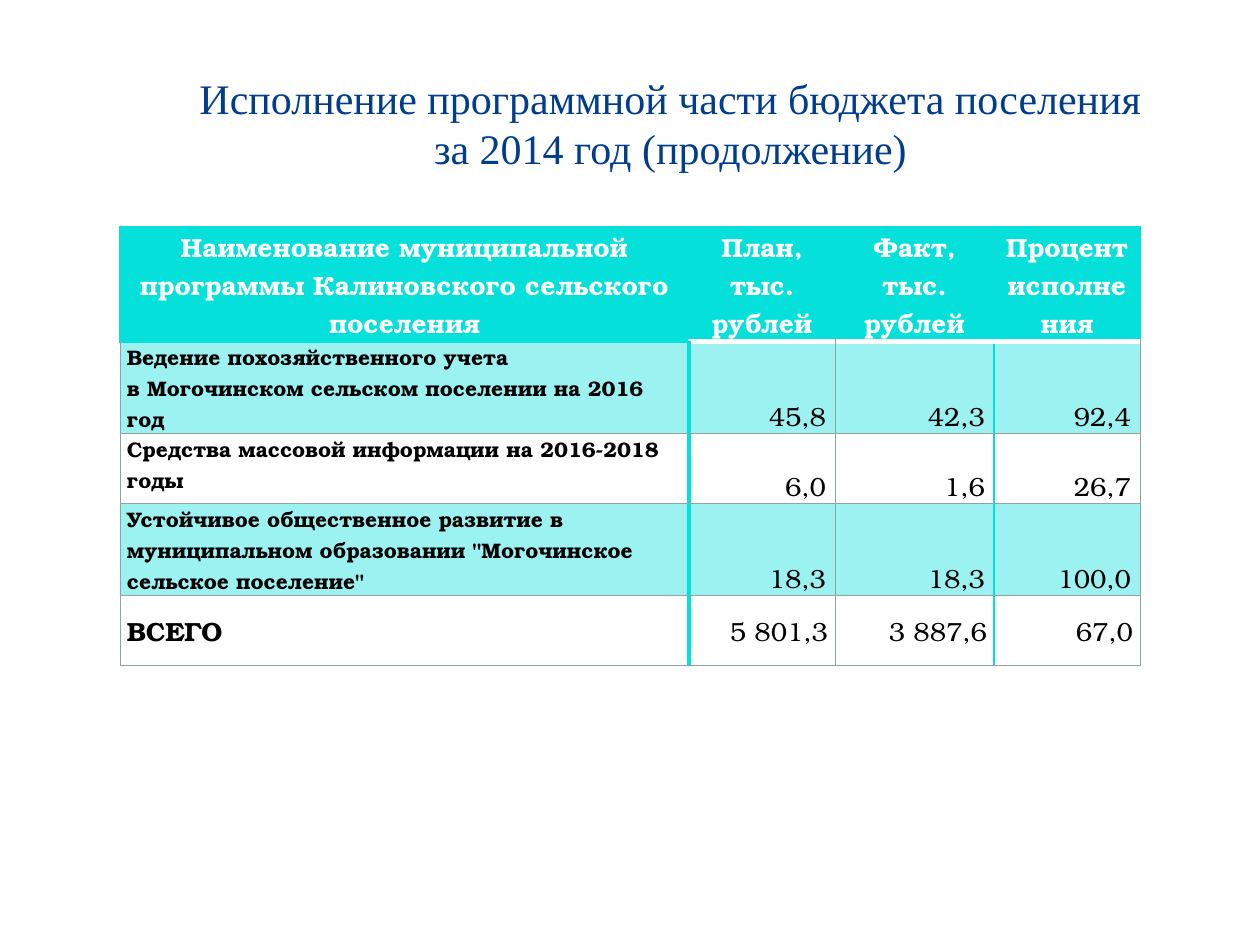
from dataclasses import dataclass

from pptx import Presentation
from pptx import util as u
from pptx.dml.color import RGBColor
from pptx.enum import text
from pptx.oxml.ns import qn
from lxml import etree

EMU_PER_PX = 914400 // 126


@dataclass(frozen=True)
class Theme:
    title_font: str = "Times New Roman"
    table_font: str = "TeX Gyre Bonum"
    title_color: str = "003D8E"
    accent: str = "05E0DB"
    grid: str = "8FA3A3"
    white: str = "FFFFFF"
    black: str = "000000"
    title_size: int = 24
    large: int = 15
    small: int = 12
    band_alpha: int = 40


@dataclass(frozen=True)
class Program:
    name: tuple[str, ...]
    figures: tuple[str, str, str]
    banded: bool = False
    total: bool = False


@dataclass(frozen=True)
class Style:
    size: int
    color: str
    bold: bool
    align: text.PP_ALIGN
    anchor: text.MSO_ANCHOR
    inset: int = 7


THEME = Theme()
COLUMN_WIDTHS = (569, 146, 159, 146)
HEADER_HEIGHT, ROW_HEIGHT = 68, 70
HEADINGS = (
    "Наименование муниципальной программы Калиновского сельского поселения",
    "План, тыс. рублей",
    "Факт, тыс. рублей",
    "Процент исполнения",
)
PROGRAMS = (
    Program(("Ведение похозяйственного учета",
             "в Могочинском сельском поселении на 2016 год"),
            ("45,8", "42,3", "92,4"), banded=True),
    Program(("Средства массовой информации на 2016-2018 годы",),
            ("6,0", "1,6", "26,7")),
    Program(("Устойчивое общественное развитие в муниципальном образовании "
             "\"Могочинское сельское поселение\"",),
            ("18,3", "18,3", "100,0"), banded=True),
    Program(("ВСЕГО",), ("5 801,3", "3 887,6", "67,0"), total=True),
)


def px(value: int) -> u.Emu:
    return u.Emu(value * EMU_PER_PX)


def add_run(para, words: str, font: str, size: int, color: str, bold: bool = False) -> None:
    span = para.add_run()
    span.text = words
    span.font.name = font
    span.font.size = u.Pt(size)
    span.font.bold = bold
    span.font.color.rgb = RGBColor.from_string(color)


def add_title(page, lines: tuple[str, ...]) -> None:
    box = page.shapes.add_textbox(px(154), px(66), px(1033), px(157))
    box.text_frame.word_wrap = True
    para = box.text_frame.paragraphs[0]
    para.alignment = text.PP_ALIGN.CENTER
    for index, line in enumerate(lines):
        if index:
            para.add_line_break()
        add_run(para, line, THEME.title_font, THEME.title_size, THEME.title_color)


def write_cell(cell, lines: tuple[str, ...], style: Style) -> None:
    cell.margin_left = cell.margin_right = px(style.inset)
    cell.margin_top = cell.margin_bottom = 0
    cell.vertical_anchor = style.anchor
    frame = cell.text_frame
    for index, line in enumerate(lines):
        para = frame.add_paragraph() if index else frame.paragraphs[0]
        para.alignment = style.align
        add_run(para, line, THEME.table_font, style.size, style.color, style.bold)


def fill_cell(cell, color: str | None, alpha: int = 100) -> None:
    if color is None:
        cell.fill.background()
        return
    cell.fill.solid()
    cell.fill.fore_color.rgb = RGBColor.from_string(color)
    if alpha < 100:
        shade = cell.fill._xPr.find(".//" + qn("a:srgbClr"))
        etree.SubElement(shade, qn("a:alpha"), val=str(alpha * 1000))


def vertical_edge(row: int, edge: int) -> tuple[str, float]:
    """Colour and width of the line at a column boundary, 0 being the left side."""
    if row == 0:
        return THEME.accent, 1
    return {1: (THEME.accent, 3), 3: (THEME.accent, 1)}.get(edge, (THEME.grid, 0.5))


def horizontal_edge(edge: int, column: int) -> tuple[str, float]:
    """Colour and width of the line at a row boundary, 0 being the top side."""
    if edge == 1 and column > 0:
        return THEME.white, 3
    return (THEME.accent, 1) if edge < 2 else (THEME.grid, 0.5)


def add_borders(cell, row: int, column: int) -> None:
    edges = {
        "a:lnL": vertical_edge(row, column),
        "a:lnR": vertical_edge(row, column + 1),
        "a:lnT": horizontal_edge(row, column),
        "a:lnB": horizontal_edge(row + 1, column),
    }
    properties = cell._tc.get_or_add_tcPr()
    for position, (tag, (color, width)) in enumerate(edges.items()):
        line = etree.Element(qn(tag), w=str(u.Pt(width)))
        solid = etree.SubElement(line, qn("a:solidFill"))
        etree.SubElement(solid, qn("a:srgbClr"), val=color)
        properties.insert(position, line)


def add_program_table(page) -> None:
    heights = (HEADER_HEIGHT,) + (ROW_HEIGHT,) * len(PROGRAMS)
    table = page.shapes.add_table(
        len(heights), len(COLUMN_WIDTHS), px(120), px(227),
        px(sum(COLUMN_WIDTHS)), px(sum(heights))).table
    for column, width in zip(table.columns, COLUMN_WIDTHS):
        column.width = px(width)
    for row, height in zip(table.rows, heights):
        row.height = px(height)

    align, anchor = text.PP_ALIGN, text.MSO_ANCHOR
    heading = Style(THEME.large, THEME.white, True, align.CENTER, anchor.MIDDLE)
    for column, words in enumerate(HEADINGS):
        cell = table.cell(0, column)
        write_cell(cell, (words,), heading)
        fill_cell(cell, THEME.accent)
        add_borders(cell, 0, column)

    name = Style(THEME.small, THEME.black, True, align.LEFT, anchor.TOP)
    figure = Style(THEME.large, THEME.black, False, align.RIGHT, anchor.BOTTOM, 9)
    total_name = Style(THEME.large, THEME.black, True, align.LEFT, anchor.MIDDLE)
    total_figure = Style(THEME.large, THEME.black, False, align.RIGHT, anchor.MIDDLE)
    for row, program in enumerate(PROGRAMS, start=1):
        first, other = (total_name, total_figure) if program.total else (name, figure)
        contents = (program.name, *((value,) for value in program.figures))
        for column, lines in enumerate(contents):
            cell = table.cell(row, column)
            write_cell(cell, lines, other if column else first)
            fill_cell(cell, THEME.accent if program.banded else None, THEME.band_alpha)
            add_borders(cell, row, column)


def main() -> None:
    deck = Presentation()
    deck.slide_width, deck.slide_height = px(1260), px(945)
    page = deck.slides.add_slide(deck.slide_layouts[6])
    add_program_table(page)
    add_title(page, ("Исполнение программной части бюджета поселения",
                     "за 2014 год (продолжение)"))
    deck.save("out.pptx")


if __name__ == "__main__":
    main()
